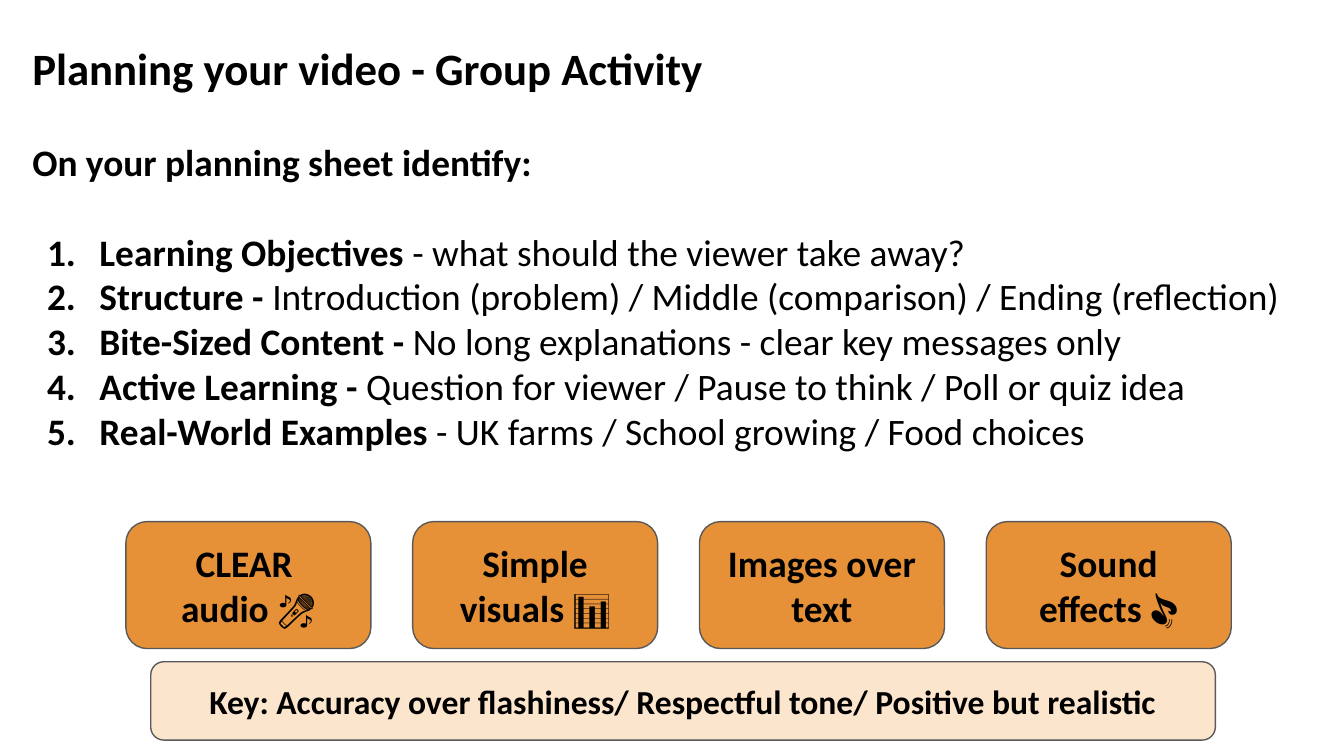
from lxml import etree
from pptx import Presentation
from pptx.dml.color import RGBColor
from pptx.enum import shapes, text
from pptx.oxml.ns import qn
from pptx.util import Cm, Pt

# Content
TITLE = "Planning your video - Group Activity"
INTRO = "On your planning sheet identify:"
STEPS = [
    ("Learning Objectives ", "- what should the viewer take away?"),
    ("Structure - ", "Introduction (problem) / Middle (comparison) / Ending (reflection)"),
    ("Bite-Sized Content - ", "No long explanations - clear key messages only"),
    ("Active Learning - ", "Question for viewer / Pause to think / Poll or quiz idea"),
    ("Real-World Examples ", "- UK farms / School growing / Food choices"),
]
TIPS = ["CLEAR \naudio 🎤", "Simple visuals 📊", "Images over text", "Sound effects 🎵"]
KEY = "Key: Accuracy over flashiness/ Respectful tone/ Positive but realistic"

THEME = {
    "font": "Calibri", "ink": "000000", "line": "595959",
    "tip": "E69138", "key": "FCE5CD",
    "title_size": 24, "body_size": 20, "key_size": 18,
}

# Layout, in centimetres
LEFT, WIDTH = 0.36, 24.16
TIP_LEFT, TIP_TOP, TIP_W, TIP_H, TIP_STEP = 2.38, 9.86, 4.63, 2.4, 5.42


def rgb(name):
    return RGBColor.from_string(THEME[name])


def style(r, size, bold=True):
    r.font.name = THEME["font"]
    r.font.size = Pt(THEME[size])
    r.font.bold = bold
    r.font.color.rgb = rgb("ink")


def set_frame(tf, anchor):
    tf.word_wrap = True
    tf.auto_size = text.MSO_AUTO_SIZE.NONE
    tf.vertical_anchor = anchor
    tf.margin_left = tf.margin_right = tf.margin_top = tf.margin_bottom = Cm(0.25)


def place(sp, left, top, width, height):
    sp.left, sp.top, sp.width, sp.height = map(Cm, (left, top, width, height))
    set_frame(sp.text_frame, text.MSO_ANCHOR.TOP)


def set_list(p, numbered):
    pPr = p._p.get_or_add_pPr()
    pPr.set("marL", str(Cm(1.27) if numbered else 0))
    pPr.set("indent", str(-Cm(0.99) if numbered else 0))
    if numbered:
        color = etree.SubElement(pPr, qn("a:buClr"))
        etree.SubElement(color, qn("a:srgbClr"), val=THEME["ink"])
        etree.SubElement(pPr, qn("a:buFont"), typeface=THEME["font"])
        etree.SubElement(pPr, qn("a:buAutoNum"), type="arabicPeriod")
    else:
        etree.SubElement(pPr, qn("a:buNone"))
    p.line_spacing = 1.0
    p.space_before = Pt(0)


def add_card(slide, words, box, fill, size):
    sp = slide.shapes.add_shape(shapes.MSO_SHAPE.ROUNDED_RECTANGLE, *map(Cm, box))
    sp.shadow.inherit = False
    sp.fill.solid()
    sp.fill.fore_color.rgb = rgb(fill)
    sp.line.color.rgb = rgb("line")
    sp.line.width = Pt(0.75)
    tf = sp.text_frame
    set_frame(tf, text.MSO_ANCHOR.MIDDLE)
    tf.text = words
    for p in tf.paragraphs:
        p.alignment = text.PP_ALIGN.CENTER
        style(p.runs[0], size)


def main():
    prs = Presentation()
    prs.slide_width, prs.slide_height = Cm(25.4), Cm(14.29)
    slide = prs.slides.add_slide(prs.slide_layouts[1])
    title, body = slide.placeholders

    # Title
    place(title, LEFT, 0.51, WIDTH, 1.54)
    p = title.text_frame.paragraphs[0]
    p.text = TITLE
    p.alignment = text.PP_ALIGN.LEFT
    style(p.runs[0], "title_size")

    # Introduction and numbered steps
    place(body, LEFT, 2.38, WIDTH, 6.51)
    tf = body.text_frame
    p = tf.paragraphs[0]
    p.text = INTRO
    set_list(p, numbered=False)
    p.space_after = Pt(24)
    style(p.runs[0], "body_size")
    for heading, detail in STEPS:
        p = tf.add_paragraph()
        set_list(p, numbered=True)
        for words, bold in ((heading, True), (detail, False)):
            r = p.add_run()
            r.text = words
            style(r, "body_size", bold)

    # Tip cards and key message
    for i, tip in enumerate(TIPS):
        box = (TIP_LEFT + i * TIP_STEP, TIP_TOP, TIP_W, TIP_H)
        add_card(slide, tip, box, "tip", "body_size")
    add_card(slide, KEY, (2.85, 12.51, 20.12, 1.48), "key", "key_size")

    prs.save("out.pptx")


if __name__ == "__main__":
    main()
